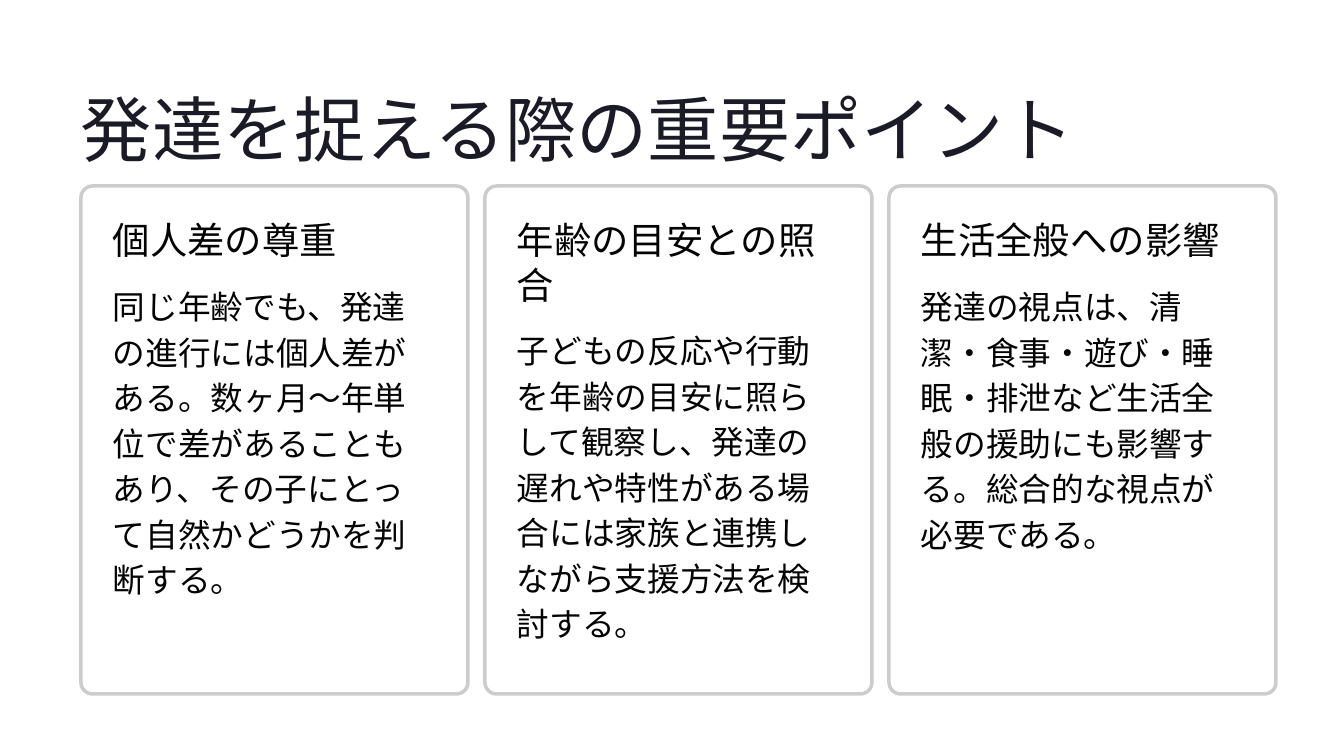
"""Build a slide with a title and three rounded cards of key points."""
from math import ceil

from lxml import etree
from pptx import Presentation, util as u
from pptx.dml.color import RGBColor
from pptx.enum import shapes, text
from pptx.oxml.ns import qn

TITLE = "発達を捉える際の重要ポイント"
CARDS = [
    ("個人差の尊重",
     "同じ年齢でも、発達の進行には個人差がある。数ヶ月〜年単位で差があることもあり、"
     "その子にとって自然かどうかを判断する。", 313),
    ("年齢の目安との照合",
     "子どもの反応や行動を年齢の目安に照らして観察し、発達の遅れや特性がある場合には"
     "家族と連携しながら支援方法を検討する。", 313),
    ("生活全般への影響",
     "発達の視点は、清潔・食事・遊び・睡眠・排泄など生活全般の援助にも影響する。"
     "総合的な視点が必要である。", 261),
]
THEME = {
    "title": ("Inter", 61, 76.5, "1B1B27"),
    "head": ("Inter", 32, 38, "030303"),
    "body": ("Roboto", 28, 39, "030303"),
    "fill": "FFFFFF",
    "line": "CCCCCC",
    "edge": 3,
    "alpha": 95,
}
DPI = 84
SCALE = 914400 / DPI
LEFT, TOP, WIDTH, HEIGHT, GAP = 81, 186, 387, 508, 17
PAD, INNER, ROW, SPACE = 32, 321, 51, 12


def px(*vals):
    """Turn pixels into EMU."""
    return [u.Emu(round(v * SCALE)) for v in vals]


def write(slide, words, role, box, wrap=True):
    """Add a text box in the style of the given role."""
    name, size, lead, color = THEME[role]
    frame = slide.shapes.add_textbox(*px(*box)).text_frame
    frame.word_wrap = wrap
    frame.auto_size = text.MSO_AUTO_SIZE.NONE
    frame.margin_left = frame.margin_right = 0
    frame.margin_top = frame.margin_bottom = 0
    frame.text = words
    para = frame.paragraphs[0]
    para.alignment = text.PP_ALIGN.LEFT
    para.line_spacing = u.Pt(lead)
    font = para.runs[0].font
    font.name, font.size = name, u.Pt(size)
    font.color.rgb = RGBColor.from_string(color)


def panel(slide, left):
    """Add the rounded outline of a card."""
    card = slide.shapes.add_shape(
        shapes.MSO_SHAPE.ROUNDED_RECTANGLE, *px(left, TOP, WIDTH, HEIGHT))
    card.shadow.inherit = False
    card.adjustments[0] = 0.03
    card.fill.solid()
    card.fill.fore_color.rgb = RGBColor.from_string(THEME["fill"])
    tint = card.fill._xPr.find(qn("a:solidFill"))[0]
    etree.SubElement(tint, qn("a:alpha"), val=str(THEME["alpha"] * 1000))
    card.line.color.rgb = RGBColor.from_string(THEME["line"])
    card.line.width = u.Pt(THEME["edge"])


def main():
    """Lay out the slide and save it."""
    deck = Presentation()
    deck.slide_width, deck.slide_height = px(16 * DPI, 9 * DPI)
    slide = deck.slides.add_slide(deck.slide_layouts[6])
    write(slide, TITLE, "title", (LEFT, 81, 1002, 90), wrap=False)
    size, lead = THEME["head"][1:3]
    unit = DPI / 72
    for col, (head, body, tall) in enumerate(CARDS):
        left = LEFT + col * (WIDTH + GAP)
        panel(slide, left)
        rows = ceil(len(head) * size * unit / INNER)
        top = TOP + PAD
        write(slide, head, "head", (left + PAD, top, INNER, rows * ROW))
        top += ROW + SPACE + round((rows - 1) * lead * unit)
        write(slide, body, "body", (left + PAD, top, INNER, tall))
    deck.save("out.pptx")


if __name__ == "__main__":
    main()
